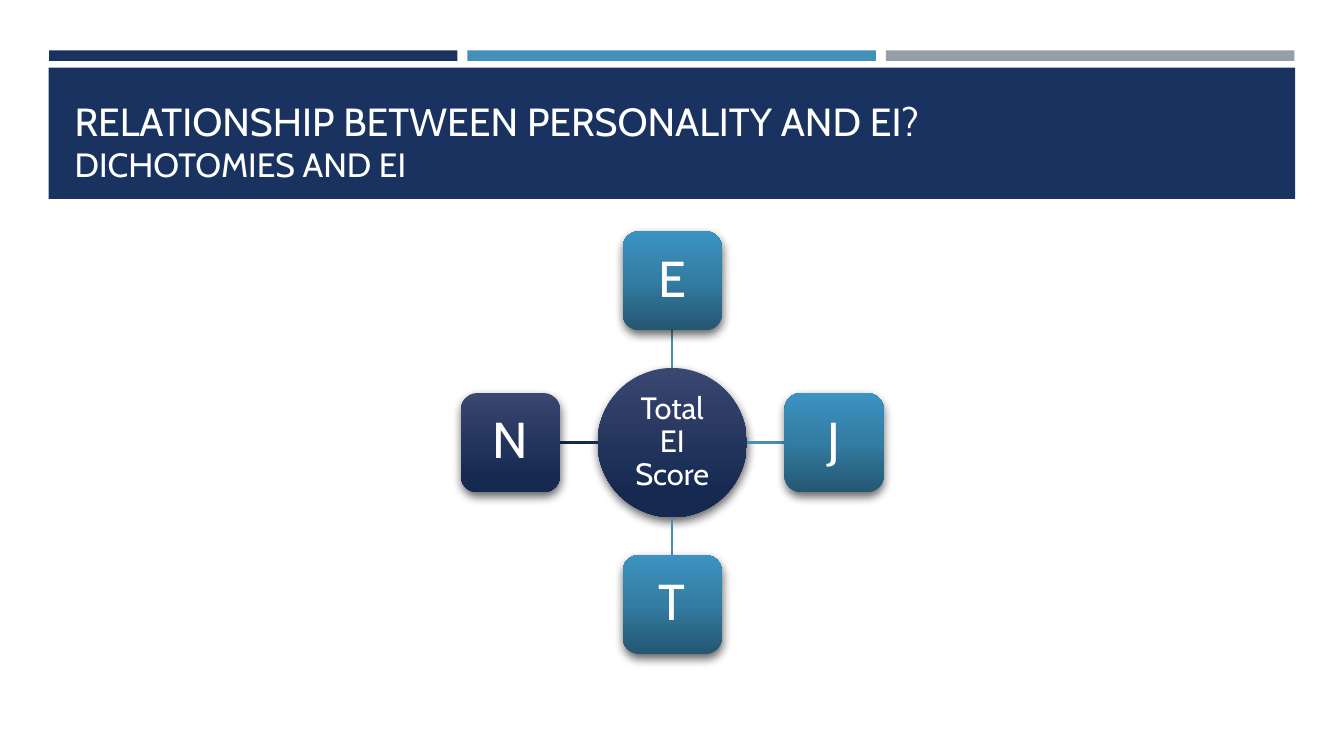
from dataclasses import dataclass

import pptx
import pptx.dml.color
import pptx.enum.shapes
import pptx.enum.text
import pptx.oxml
import pptx.oxml.ns
import pptx.shapes.autoshape
import pptx.slide
import pptx.text.text
import pptx.util

Pt = pptx.util.Pt
Shape = pptx.enum.shapes.MSO_SHAPE
Align = pptx.enum.text.PP_ALIGN
Anchor = pptx.enum.text.MSO_ANCHOR


@dataclass(frozen=True)
class Gradient:
    stops: tuple[tuple[int, str], ...]
    angle: int


@dataclass(frozen=True)
class Theme:
    font: str = "Cabin"
    navy: str = "1A3260"
    blue: str = "4590B8"
    grey: str = "969FA7"
    dark_spoke: str = "15284D"
    white: str = "FFFFFF"
    navy_glow: Gradient = Gradient(((0, "394771"), (84, "162A51")), 90)
    blue_glow: Gradient = Gradient(((0, "245772"), (50, "337CA2"), (100, "3C93C1")), 270)
    title_size: float = 28
    subtitle_size: float = 24
    hub_size: float = 22
    letter_size: float = 36
    spoke_width: float = 1.75


@dataclass(frozen=True)
class Node:
    label: str
    kind: Shape
    x: float
    y: float
    size: float
    gradient: Gradient
    text_size: float
    inset: float


@dataclass(frozen=True)
class Dichotomy:
    letter: str
    dx: int
    dy: int
    gradient: Gradient
    spoke: str


THEME = Theme()
CENTER_X, CENTER_Y = 480.2, 316.2
HUB_DIAMETER = 106.7
TILE_SIZE = 70.9
TILE_DISTANCE = 115.6
BAR_LEFT, BAR_PITCH, BAR_WIDTH = 35, 298.9, 291.7

DICHOTOMIES = (
    Dichotomy("E", 0, -1, THEME.blue_glow, THEME.blue),
    Dichotomy("J", 1, 0, THEME.blue_glow, THEME.blue),
    Dichotomy("T", 0, 1, THEME.blue_glow, THEME.blue),
    Dichotomy("N", -1, 0, THEME.navy_glow, THEME.dark_spoke),
)


def rgb(color: str) -> pptx.dml.color.RGBColor:
    return pptx.dml.color.RGBColor.from_string(color)


def style_text(paragraph: pptx.text.text._Paragraph, size: float, align: Align) -> None:
    paragraph.alignment = align
    paragraph.font.name = THEME.font
    paragraph.font.size = Pt(size)
    paragraph.font.color.rgb = rgb(THEME.white)


def add_block(slide: pptx.slide.Slide, left: float, top: float, width: float,
              height: float, color: str) -> None:
    block = slide.shapes.add_shape(Shape.RECTANGLE, Pt(left), Pt(top), Pt(width), Pt(height))
    block.shadow.inherit = False
    block.fill.solid()
    block.fill.fore_color.rgb = rgb(color)
    block.line.fill.background()


def apply_glow(shape: pptx.shapes.autoshape.Shape, gradient: Gradient) -> None:
    ns = pptx.oxml.ns.nsdecls("a")
    stops = "".join(f'<a:gs pos="{position * 1000}"><a:srgbClr val="{color}"/></a:gs>'
                    for position, color in gradient.stops)
    shape.fill.gradient()
    properties = shape.element.spPr
    properties.replace(
        properties.find(pptx.oxml.ns.qn("a:gradFill")),
        pptx.oxml.parse_xml(
            f'<a:gradFill {ns} rotWithShape="1"><a:gsLst>{stops}</a:gsLst>'
            f'<a:lin ang="{gradient.angle * 60000}" scaled="0"/></a:gradFill>'))
    shape.shadow.inherit = False
    properties.find(pptx.oxml.ns.qn("a:effectLst")).append(
        pptx.oxml.parse_xml(
            f'<a:outerShdw {ns} blurRad="{Pt(7)}" dist="{Pt(3)}" dir="{84 * 60000}" '
            'algn="ctr" rotWithShape="0"><a:srgbClr val="000000">'
            '<a:alpha val="60000"/></a:srgbClr></a:outerShdw>'))


def add_node(slide: pptx.slide.Slide, node: Node) -> None:
    shape = slide.shapes.add_shape(
        node.kind, Pt(node.x - node.size / 2), Pt(node.y - node.size / 2),
        Pt(node.size), Pt(node.size))
    apply_glow(shape, node.gradient)
    shape.line.fill.background()
    frame = shape.text_frame
    frame.word_wrap = True
    frame.vertical_anchor = Anchor.MIDDLE
    frame.margin_left = frame.margin_right = Pt(node.inset)
    frame.margin_top = frame.margin_bottom = Pt(node.inset)
    label = frame.paragraphs[0]
    label.text = node.label
    label.line_spacing = 0.9
    style_text(label, node.text_size, Align.CENTER)


def add_spoke(slide: pptx.slide.Slide, dichotomy: Dichotomy) -> None:
    start = HUB_DIAMETER / 2
    end = TILE_DISTANCE - TILE_SIZE / 2
    spoke = slide.shapes.add_connector(
        pptx.enum.shapes.MSO_CONNECTOR.STRAIGHT,
        Pt(CENTER_X + dichotomy.dx * start), Pt(CENTER_Y + dichotomy.dy * start),
        Pt(CENTER_X + dichotomy.dx * end), Pt(CENTER_Y + dichotomy.dy * end))
    spoke.line.color.rgb = rgb(dichotomy.spoke)
    spoke.line.width = Pt(THEME.spoke_width)
    spoke.element.spPr.append(
        pptx.oxml.parse_xml(f'<a:effectLst {pptx.oxml.ns.nsdecls("a")}/>'))


def fill_title(title: pptx.shapes.autoshape.Shape) -> None:
    title.left, title.top, title.width, title.height = Pt(46.1), Pt(55.4), Pt(868.3), Pt(79.9)
    frame = title.text_frame
    frame.word_wrap = True
    frame.auto_size = pptx.enum.text.MSO_AUTO_SIZE.NONE
    frame.vertical_anchor = Anchor.BOTTOM
    heading = frame.paragraphs[0]
    style_text(heading, THEME.title_size, Align.LEFT)
    question = heading.add_run()
    question.text = "RELATIONSHIP BETWEEN PERSONALITY AND EI?"
    heading.add_line_break()
    subtitle = heading.add_run()
    subtitle.text = "DICHOTOMIES AND EI"
    subtitle.font.size = Pt(THEME.subtitle_size)


def main() -> None:
    presentation = pptx.Presentation()
    presentation.slide_width, presentation.slide_height = Pt(960), Pt(540)
    slide = presentation.slides.add_slide(presentation.slide_layouts.get_by_name("Title Only"))

    for column, color in enumerate((THEME.navy, THEME.blue, THEME.grey)):
        add_block(slide, BAR_LEFT + column * BAR_PITCH, 36, BAR_WIDTH, 7.5, color)
    add_block(slide, 34.8, 48.4, 890.4, 93.7, THEME.navy)

    title = slide.shapes.title
    fill_title(title)
    slide.shapes._spTree.append(title.element)

    add_node(slide, Node("Total EI Score", Shape.OVAL, CENTER_X, CENTER_Y, HUB_DIAMETER,
                         THEME.navy_glow, THEME.hub_size, 5))
    for dichotomy in DICHOTOMIES:
        add_spoke(slide, dichotomy)
        add_node(slide, Node(dichotomy.letter, Shape.ROUNDED_RECTANGLE,
                             CENTER_X + dichotomy.dx * TILE_DISTANCE,
                             CENTER_Y + dichotomy.dy * TILE_DISTANCE,
                             TILE_SIZE, dichotomy.gradient, THEME.letter_size, 7.2))

    presentation.save("out.pptx")


if __name__ == "__main__":
    main()
